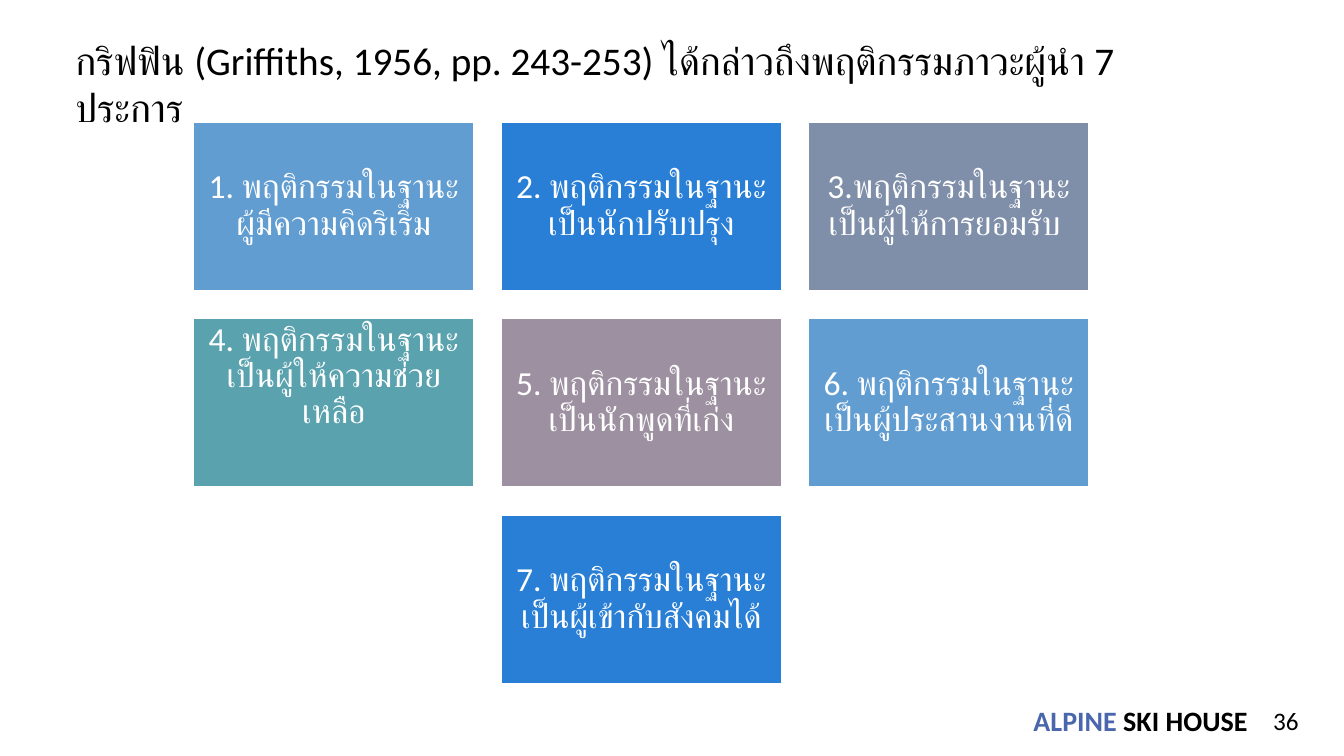
from dataclasses import dataclass

from pptx import Presentation
from pptx.dml.color import RGBColor
from pptx.enum.shapes import MSO_SHAPE
from pptx.enum.text import MSO_ANCHOR as Anchor, MSO_AUTO_SIZE as AutoSize, PP_ALIGN as Align
from pptx.util import Inches, Pt

FONT = "Calibri"
COLORS = {
    "black": "000000",
    "white": "FFFFFF",
    "brand": "4A66AC",
    "sky": "629DD1",
    "blue": "297FD5",
    "slate": "7F8FA9",
    "teal": "5AA2AE",
    "mauve": "9D90A0",
}
CARD_CYCLE = ("sky", "blue", "slate", "teal", "mauve")
COLUMNS = 3
GRID_LEFT, GRID_TOP = 1.92, 1.21
CARD_WIDTH, CARD_HEIGHT = 2.78, 1.67
COLUMN_PITCH, ROW_PITCH = 3.05, 1.95


@dataclass(frozen=True)
class Card:
    text: str
    top_inset: float = 0.1
    bottom_inset: float = 0.1


@dataclass(frozen=True)
class Label:
    left: float
    top: float
    width: float
    height: float
    size: int
    runs: tuple[tuple[str, str], ...]
    align: Align = Align.LEFT
    anchor: Anchor = Anchor.TOP
    bold: bool = False
    wrap: bool = True
    grow: bool = False
    inset: float | None = None


CARDS = (
    Card("1. พฤติกรรมในฐานะผู้มีความคิดริเริ่ม"),
    Card("2. พฤติกรรมในฐานะเป็นนักปรับปรุง"),
    Card("3.พฤติกรรมในฐานะเป็นผู้ให้การยอมรับ "),
    Card("4. พฤติกรรมในฐานะเป็นผู้ให้ความช่วยเหลือ", top_inset=0, bottom_inset=0.52),
    Card("5. พฤติกรรมในฐานะเป็นนักพูดที่เก่ง"),
    Card("6. พฤติกรรมในฐานะเป็นผู้ประสานงานที่ดี"),
    Card("7. พฤติกรรมในฐานะเป็นผู้เข้ากับสังคมได้"),
)
LABELS = (
    Label(10.23, 6.96, 2.18, 0.38, 20, (("ALPINE", "brand"), (" SKI HOUSE", "black")),
          anchor=Anchor.MIDDLE, bold=True, wrap=False, grow=True, inset=0.02),
    Label(12.42, 6.95, 0.56, 0.4, 18, (("36", "black"),), align=Align.RIGHT),
    Label(0.65, 0.31, 11.06, 0.57, 28,
          (("กริฟฟิน (Griffiths, 1956, pp. 243-253) ได้กล่าวถึงพฤติกรรมภาวะผู้นำ 7 ประการ", "black"),),
          grow=True),
)


def rgb(name: str) -> RGBColor:
    return RGBColor.from_string(COLORS[name])


def set_insets(frame, left: float, top: float, right: float, bottom: float) -> None:
    frame.margin_left, frame.margin_right = Inches(left), Inches(right)
    frame.margin_top, frame.margin_bottom = Inches(top), Inches(bottom)


def add_label(slide, label: Label) -> None:
    box = slide.shapes.add_textbox(Inches(label.left), Inches(label.top),
                                   Inches(label.width), Inches(label.height))
    frame = box.text_frame
    frame.word_wrap = label.wrap
    frame.vertical_anchor = label.anchor
    frame.auto_size = AutoSize.SHAPE_TO_FIT_TEXT if label.grow else AutoSize.NONE
    if label.inset is not None:
        set_insets(frame, *[label.inset] * 4)
    paragraph = frame.paragraphs[0]
    paragraph.alignment = label.align
    paragraph.font.name = FONT
    paragraph.font.size = Pt(label.size)
    paragraph.font.bold = label.bold
    for text, color in label.runs:
        run = paragraph.add_run()
        run.text = text
        run.font.color.rgb = rgb(color)


def add_card(slide, card: Card, column: int, row: int, color: str) -> None:
    shape = slide.shapes.add_shape(
        MSO_SHAPE.RECTANGLE,
        Inches(GRID_LEFT + column * COLUMN_PITCH), Inches(GRID_TOP + row * ROW_PITCH),
        Inches(CARD_WIDTH), Inches(CARD_HEIGHT))
    shape.shadow.inherit = False
    shape.fill.solid()
    shape.fill.fore_color.rgb = rgb(color)
    shape.line.color.rgb = rgb("white")
    shape.line.width = Pt(1)
    frame = shape.text_frame
    frame.word_wrap = True
    frame.vertical_anchor = Anchor.MIDDLE
    set_insets(frame, 0.1, card.top_inset, 0.1, card.bottom_inset)
    paragraph = frame.paragraphs[0]
    paragraph.text = card.text
    paragraph.alignment = Align.CENTER
    paragraph.line_spacing = 0.9
    paragraph.font.name = FONT
    paragraph.font.size = Pt(24)
    paragraph.font.color.rgb = rgb("white")


def add_card_grid(slide) -> None:
    """Fill rows of three and centre the single card of the last row."""
    for index, card in enumerate(CARDS):
        row, column = divmod(index, COLUMNS)
        cards_in_row = min(COLUMNS, len(CARDS) - row * COLUMNS)
        column += (COLUMNS - cards_in_row) // 2
        add_card(slide, card, column, row, CARD_CYCLE[index % len(CARD_CYCLE)])


def main() -> None:
    presentation = Presentation()
    presentation.slide_width = Inches(13.33)
    presentation.slide_height = Inches(7.5)
    slide = presentation.slides.add_slide(presentation.slide_layouts[6])
    for label in LABELS:
        add_label(slide, label)
    add_card_grid(slide)
    presentation.save("out.pptx")


if __name__ == "__main__":
    main()
